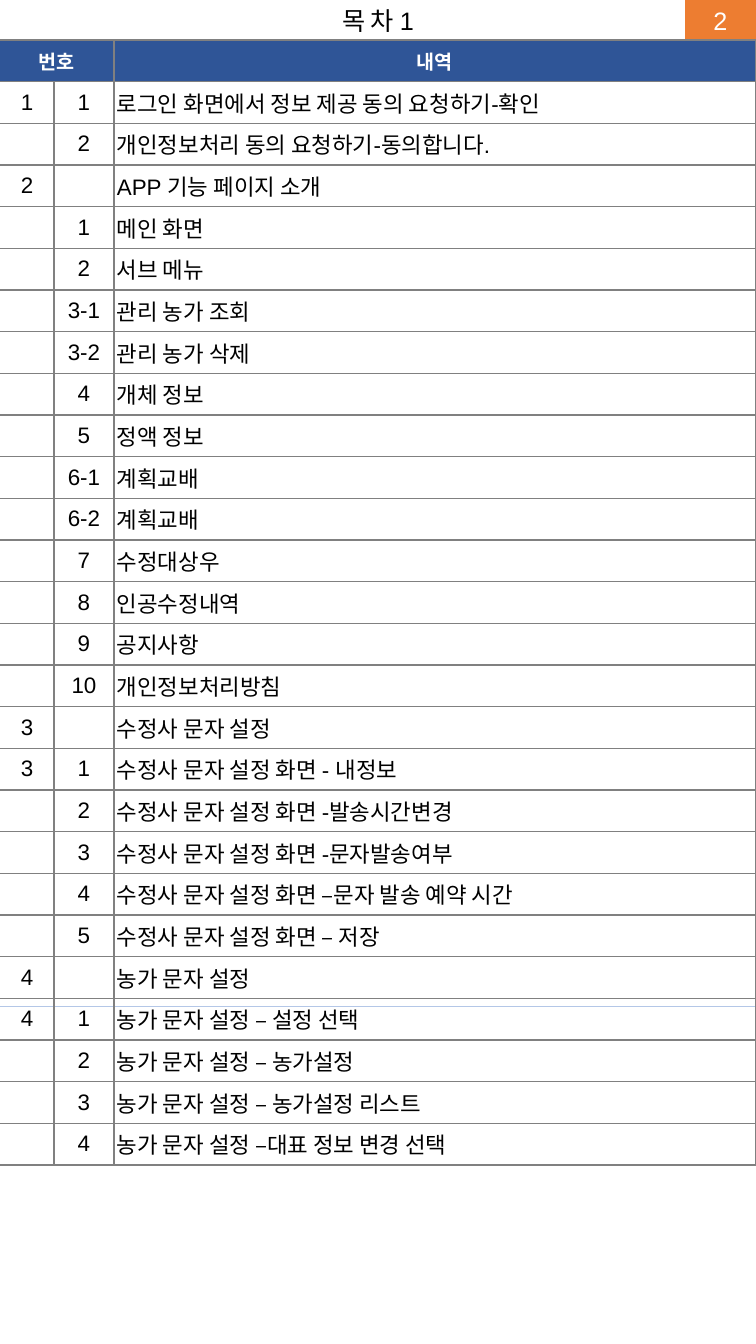
"""Builds the first contents page: a title bar with a page badge above a numbered table."""
from dataclasses import dataclass

from lxml.etree import SubElement
from pptx import Presentation
from pptx.dml.color import RGBColor
from pptx.enum.shapes import MSO_CONNECTOR, MSO_SHAPE
from pptx.enum.text import MSO_ANCHOR, MSO_AUTO_SIZE, PP_ALIGN
from pptx.oxml import parse_xml
from pptx.oxml.ns import nsdecls, qn
from pptx.util import Emu, Inches, Pt

TITLE = "목 차 1"
PAGE = "2"
HEADER = ("번호", "", "내역")
ENTRIES = [
    ("1", "1", "로그인 화면에서 정보 제공 동의 요청하기-확인"),
    ("", "2", "개인정보처리 동의 요청하기-동의합니다."),
    ("2", "", "APP 기능 페이지 소개"),
    ("", "1", "메인 화면"),
    ("", "2", "서브 메뉴"),
    ("", "3-1", "관리 농가 조회"),
    ("", "3-2", "관리 농가 삭제"),
    ("", "4", "개체 정보"),
    ("", "5", "정액 정보"),
    ("", "6-1", "계획교배"),
    ("", "6-2", "계획교배"),
    ("", "7", "수정대상우"),
    ("", "8", "인공수정내역"),
    ("", "9", "공지사항"),
    ("", "10", "개인정보처리방침"),
    ("3", "", "수정사 문자 설정"),
    ("3", "1", "수정사 문자 설정 화면 - 내정보"),
    ("", "2", "수정사 문자 설정 화면 -발송시간변경"),
    ("", "3", "수정사 문자 설정 화면 -문자발송여부"),
    ("", "4", "수정사 문자 설정 화면 –문자 발송 예약 시간"),
    ("", "5", "수정사 문자 설정 화면 – 저장"),
    ("4", "", "농가 문자 설정"),
    ("4", "1", "농가 문자 설정 – 설정 선택"),
    ("", "2", "농가 문자 설정 – 농가설정"),
    ("", "3", "농가 문자 설정 – 농가설정 리스트"),
    ("", "4", "농가 문자 설정 –대표 정보 변경 선택"),
]

SLIDE_W, SLIDE_H = 756, 1344
BAR_H, BADGE_W = 40, 71
RULES_Y = (1006, BAR_H)
COLS = (54, 60, 642)
TABLE_H = 1126
PAD_X, PAD_Y = 3, 2
SCALE = Inches(7.5) / SLIDE_W


@dataclass(frozen=True)
class Theme:
    font: str = "Arial"
    text: str = "000000"
    light: str = "FFFFFF"
    badge: str = "ED7D31"
    header: str = "2F5597"
    rule: str = "B4C7E7"
    grid: str = "808080"
    title_pt: int = 18
    header_pt: int = 14
    body_pt: int = 16
    rule_pt: float = 0.5
    grid_pt: int = 1


T = Theme()


def px(n):
    return Emu(round(n * SCALE))


def write(tf, text, size, color, align=PP_ALIGN.CENTER, bold=False):
    p = tf.paragraphs[0]
    p.alignment = align
    r = p.add_run()
    r.text = text
    r.font.name, r.font.size, r.font.bold = T.font, Pt(size), bold
    r.font.color.rgb = RGBColor.from_string(color)


def add_title(slide):
    sp = slide.shapes.title
    sp.left, sp.top, sp.width, sp.height = px(0), px(0), px(SLIDE_W), px(BAR_H)
    tf = sp.text_frame
    tf.auto_size, tf.vertical_anchor = MSO_AUTO_SIZE.NONE, MSO_ANCHOR.MIDDLE
    write(tf, TITLE, T.title_pt, T.text)


def add_badge(slide):
    sp = slide.shapes.add_shape(MSO_SHAPE.RECTANGLE, px(SLIDE_W - BADGE_W), px(0), px(BADGE_W), px(BAR_H))
    sp.shadow.inherit = False
    sp.fill.solid()
    sp.fill.fore_color.rgb = RGBColor.from_string(T.badge)
    sp.line.fill.background()
    sp.text_frame.vertical_anchor = MSO_ANCHOR.MIDDLE
    write(sp.text_frame, PAGE, T.title_pt, T.light)


def add_rule(slide, y):
    line = slide.shapes.add_connector(MSO_CONNECTOR.STRAIGHT, px(0), px(y), px(SLIDE_W), px(y))
    line.line.color.rgb = RGBColor.from_string(T.rule)
    line.line.width = Pt(T.rule_pt)
    SubElement(line._element.spPr, qn("a:effectLst"))


def set_borders(cell, first_col):
    tc_pr = cell._tc.get_or_add_tcPr()
    for i, side in enumerate("LRTB"):
        fill = f'<a:solidFill><a:srgbClr val="{T.grid}"/></a:solidFill>'
        if side == "L" and first_col:
            fill = "<a:noFill/>"
        tc_pr.insert(i, parse_xml(f'<a:ln{side} {nsdecls("a")} w="{Pt(T.grid_pt)}">{fill}</a:ln{side}>'))


def format_cell(cell, text, row, col):
    cell.vertical_anchor = MSO_ANCHOR.MIDDLE
    if row == 0:
        cell.fill.solid()
        cell.fill.fore_color.rgb = RGBColor.from_string(T.header)
        style = (T.header_pt, T.light, PP_ALIGN.CENTER, True)
    else:
        cell.fill.background()
        cell.margin_left = cell.margin_right = px(PAD_X)
        cell.margin_top = cell.margin_bottom = px(PAD_Y)
        style = (T.body_pt, T.text, PP_ALIGN.LEFT if col == 2 else PP_ALIGN.CENTER)
    set_borders(cell, col == 0)
    if text:
        write(cell.text_frame, text, *style)


def add_contents(slide):
    rows = [HEADER, *ENTRIES]
    frame = slide.shapes.add_table(len(rows), len(COLS), px(0), px(BAR_H), px(SLIDE_W), px(TABLE_H))
    table = frame.table
    table.first_row = table.horz_banding = False
    for column, width in zip(table.columns, COLS):
        column.width = px(width)
    for i, entry in enumerate(rows):
        table.rows[i].height = px(TABLE_H / len(rows))
        for j, text in enumerate(entry):
            format_cell(table.cell(i, j), text, i, j)
    table.cell(0, 0).merge(table.cell(0, 1))


def main():
    prs = Presentation()
    prs.slide_width, prs.slide_height = px(SLIDE_W), px(SLIDE_H)
    slide = prs.slides.add_slide(prs.slide_layouts[5])
    add_title(slide)
    add_badge(slide)
    for y in RULES_Y:
        add_rule(slide, y)
    add_contents(slide)
    prs.save("out.pptx")


if __name__ == "__main__":
    main()
